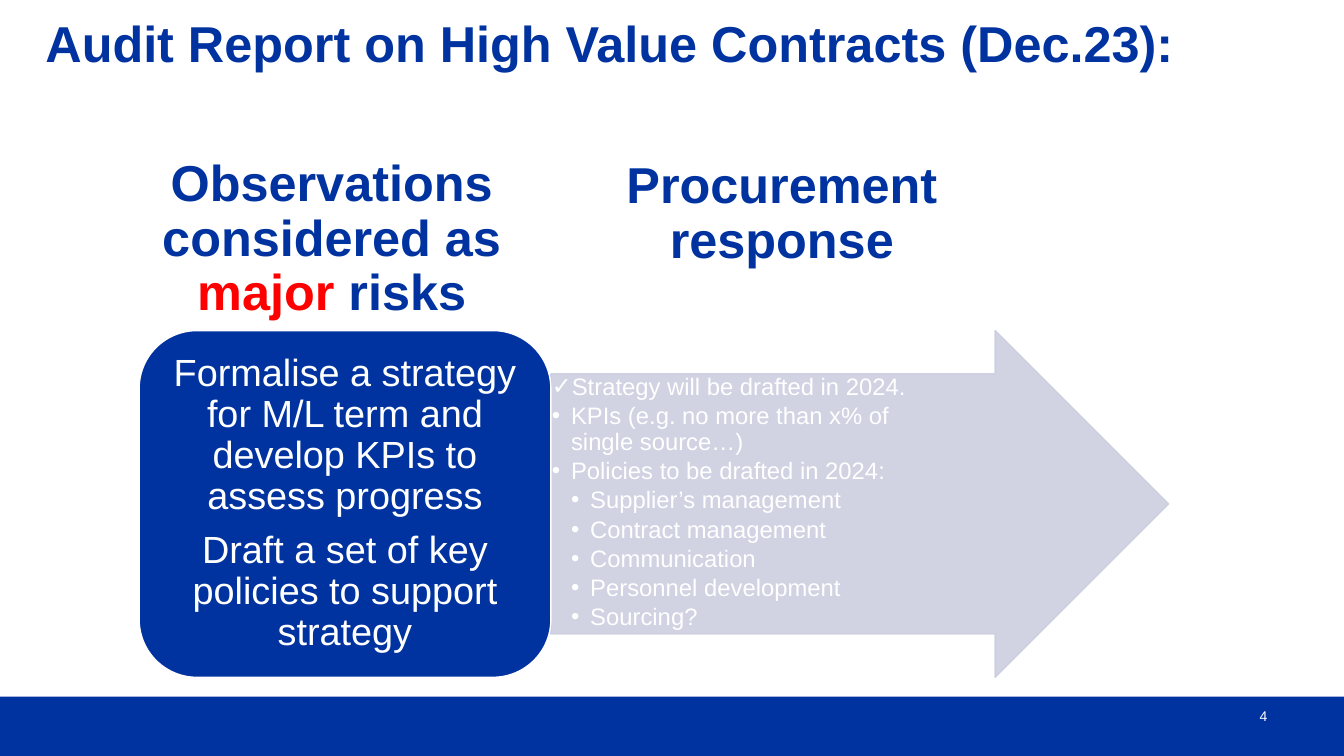
from lxml.etree import SubElement
from pptx import Presentation
from pptx.dml.color import RGBColor
from pptx.enum.shapes import MSO_SHAPE as SHAPE
from pptx.enum.text import MSO_ANCHOR as ANCHOR, MSO_AUTO_SIZE as AUTO, PP_ALIGN as ALIGN
from pptx.oxml.ns import qn
from pptx.util import Inches, Pt

W, H = 13.33, 7.5
BLUE, RED, WHITE, LILAC = "0033A0", "FF0000", "FFFFFF", "CCCEDF"
INDENT = 0.19
RISKS = [
    "Formalise a strategy for M/L term and develop KPIs to assess progress",
    "Draft a set of key policies to support strategy",
]
RESPONSES = [
    (1, "✓", "Strategy will be drafted in 2024."),
    (1, "•", "KPIs (e.g. no more than x% of single source…)"),
    (1, "•", "Policies to be drafted in 2024:"),
    (2, "•", "Supplier’s management"),
    (2, "•", "Contract management"),
    (2, "•", "Communication"),
    (2, "•", "Personnel development"),
    (2, "•", "Sourcing?"),
]


def color(value):
    return RGBColor.from_string(value)


def box_args(box):
    return [Inches(v) for v in box]


def add_run(p, text, size, value, bold=False):
    r = p.add_run()
    r.text = text
    r.font.name = "Arial"
    r.font.size = Pt(size)
    r.font.bold = bold
    r.font.color.rgb = color(value)


def set_frame(tf, anchor=ANCHOR.TOP, insets=(0, 0, 0, 0)):
    tf.word_wrap = True
    tf.auto_size = AUTO.NONE
    tf.vertical_anchor = anchor
    tf.margin_left, tf.margin_top, tf.margin_right, tf.margin_bottom = box_args(insets)
    return tf


def next_paragraph(tf, align, after=0):
    p = tf.paragraphs[0] if not tf.paragraphs[0].runs else tf.add_paragraph()
    p.alignment = align
    p.line_spacing = 0.9
    p.space_before = Pt(0)
    p.space_after = Pt(after)
    return p


def add_block(s, kind, box, fill, line=None):
    sp = s.shapes.add_shape(kind, *box_args(box))
    sp.shadow.inherit = False
    sp.fill.solid()
    sp.fill.fore_color.rgb = color(fill)
    if line:
        sp.line.color.rgb = color(line)
        sp.line.width = Pt(1)
    else:
        sp.line.fill.background()
    return sp


def add_title(s, box):
    sp = s.shapes.title
    sp.left, sp.top, sp.width, sp.height = box_args(box)
    p = next_paragraph(set_frame(sp.text_frame), ALIGN.LEFT)
    add_run(p, "Audit Report on High Value Contracts (Dec.23):", 36, BLUE, True)


def add_footer(s, box):
    x, y, w, h = box
    add_block(s, SHAPE.RECTANGLE, box, BLUE)
    sp = s.shapes.add_textbox(*box_args((x + w - 0.98, y, 0.22, 0.4)))
    p = next_paragraph(set_frame(sp.text_frame, ANCHOR.MIDDLE), ALIGN.RIGHT, 6)
    add_run(p, "4", 10, WHITE)


def add_heading(s, box, parts):
    sp = s.shapes.add_textbox(*box_args(box))
    p = next_paragraph(set_frame(sp.text_frame), ALIGN.CENTER)
    for text, value in parts:
        add_run(p, text, 36, value, True)


def add_bullet(p, level, char):
    pPr = p._p.get_or_add_pPr()
    pPr.set("marL", str(Inches(INDENT * level)))
    pPr.set("indent", str(-Inches(INDENT)))
    SubElement(pPr, qn("a:buFont")).set("typeface", "Arial")
    SubElement(pPr, qn("a:buChar")).set("char", char)


def add_response_arrow(s, box):
    sp = add_block(s, SHAPE.RIGHT_ARROW, box, LILAC, LILAC)
    sp.adjustments[0], sp.adjustments[1] = 0.75, 0.5
    for clr in sp._element.spPr.iter(qn("a:srgbClr")):
        SubElement(clr, qn("a:alpha")).set("val", "90000")
    tf = set_frame(sp.text_frame, ANCHOR.TOP, (0.01, 0.01, box[3] / 4, 0.01))
    for level, char, text in RESPONSES:
        p = next_paragraph(tf, ALIGN.LEFT, 2.5)
        p.level = level
        add_bullet(p, level, char)
        add_run(p, text, 17, WHITE)


def add_risk_card(s, box):
    sp = add_block(s, SHAPE.ROUNDED_RECTANGLE, box, BLUE, WHITE)
    tf = set_frame(sp.text_frame, ANCHOR.MIDDLE, (0.11, 0.06, 0.11, 0.06))
    for text in RISKS:
        add_run(next_paragraph(tf, ALIGN.CENTER, 9.45), text, 27, WHITE)


def add_risk_response(s, box, card_share=0.4):
    x, y, w, h = box
    card_w = w * card_share
    add_response_arrow(s, (x + card_w, y, w - card_w, h))
    add_risk_card(s, (x, y, card_w, h))


def main():
    prs = Presentation()
    prs.slide_width, prs.slide_height = Inches(W), Inches(H)
    s = prs.slides.add_slide(prs.slide_layouts[5])
    add_footer(s, (0, 6.91, W, H - 6.91))
    add_title(s, (0.45, 0.19, W - 0.45, 1.17))
    add_heading(s, (1, 1.57, 4.58, 0.42),
                [("Observations considered as ", BLUE), ("major ", RED), ("risks", BLUE)])
    add_heading(s, (5.66, 1.59, 4.19, 0.79), [("Procurement response", BLUE)])
    add_risk_response(s, (1.38, 3.28, 10.21, 3.44))
    prs.save("out.pptx")


if __name__ == "__main__":
    main()
